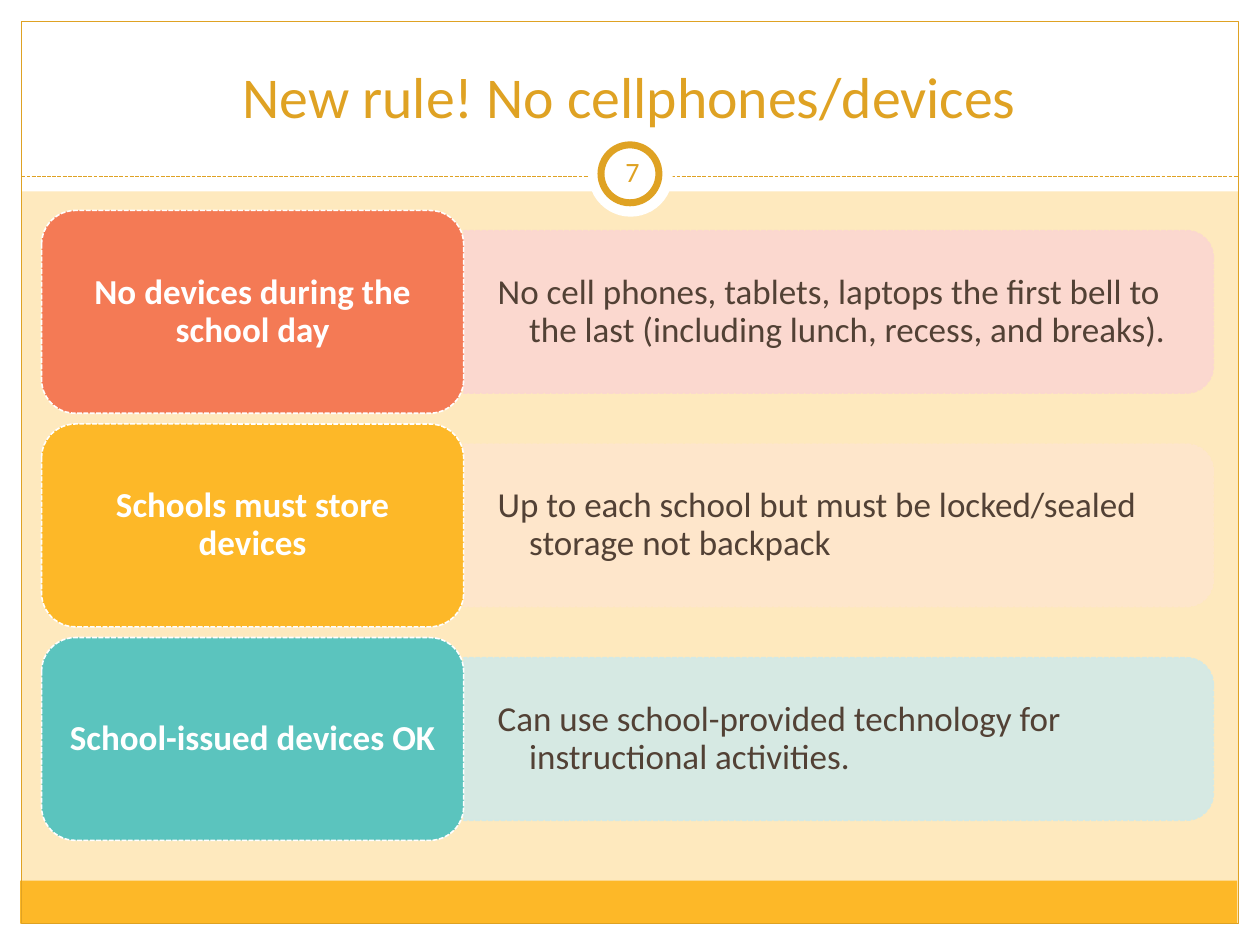
from dataclasses import dataclass

from lxml import etree
from pptx import Presentation
from pptx.dml.color import RGBColor
from pptx.enum.dml import MSO_LINE
from pptx.enum.shapes import MSO_CONNECTOR, MSO_SHAPE
from pptx.enum.text import MSO_ANCHOR, PP_ALIGN
from pptx.oxml.ns import qn
from pptx.util import Inches, Pt

RECT = MSO_SHAPE.RECTANGLE
OVAL = MSO_SHAPE.OVAL
ROUND = MSO_SHAPE.ROUNDED_RECTANGLE
TAB = MSO_SHAPE.ROUND_2_SAME_RECTANGLE
LINE = MSO_CONNECTOR.STRAIGHT
DASH = MSO_LINE.SQUARE_DOT
MID = MSO_ANCHOR.MIDDLE
LOW = MSO_ANCHOR.BOTTOM
LEFT = PP_ALIGN.LEFT
CENTER = PP_ALIGN.CENTER

FONT = "Calibri"
WHITE = "FFFFFF"
GOLD = "DFA223"
AMBER = "FDB828"
CREAM = "FEE9BE"
BROWN = "524135"

TOP, STEP = 1.67, 1.695
CARD_W, CARD_H = 3.35, 1.61
BAR_W, BAR_H = 5.95, 1.29


@dataclass
class Box:
    x: float
    y: float
    w: float
    h: float

    def args(self):
        return [Inches(v) for v in (self.x, self.y, self.w, self.h)]


@dataclass
class Style:
    size: float
    color: str
    bold: bool = False
    align: PP_ALIGN = CENTER
    anchor: MSO_ANCHOR = MID
    pad: tuple = (0.1, 0.05)
    space: float = 1.0
    hang: float = 0


@dataclass
class Rule:
    head: str
    body: str
    fill: str
    tint: str


TITLE = Style(33, GOLD, anchor=LOW)
NUMBER = Style(16, GOLD, pad=(0.05, 0.05))
HEAD = Style(20, WHITE, bold=True, pad=(0.08, 0.04), space=0.9)
BODY = Style(20, BROWN, align=LEFT, pad=(0.27, 0.14), space=0.9, hang=0.25)

RULES = [
    Rule("No devices during the school day",
         "No cell phones, tablets, laptops the first bell to the last "
         "(including lunch, recess, and breaks).",
         "F47A55", "FBD7D1"),
    Rule("Schools must store devices",
         "Up to each school but must be locked/sealed storage not backpack",
         AMBER, "FEE6CD"),
    Rule("School-issued devices OK",
         "Can use school-provided technology for instructional activities.",
         "5BC4BE", "D2EAE8"),
]


def paint(target, color: str) -> None:
    target.solid()
    target.fore_color.rgb = RGBColor.from_string(color)


def stroke(line, color: str, width: float, dash: bool = False) -> None:
    paint(line.fill, color)
    line.width = Pt(width)
    if dash:
        line.dash_style = DASH


def fade(shape, share: int) -> None:
    for color in shape._element.spPr.iter(qn("a:srgbClr")):
        etree.SubElement(color, qn("a:alpha"), val=str(share * 1000))


def draw(slide, kind: MSO_SHAPE, box: Box, fill: str = "", edge: str = "",
         width: float = 0.9, dash: bool = False):
    shape = slide.shapes.add_shape(kind, *box.args())
    shape.shadow.inherit = False
    if fill:
        paint(shape.fill, fill)
    else:
        shape.fill.background()
    if edge:
        stroke(shape.line, edge, width, dash)
    else:
        shape.line.fill.background()
    return shape


def write(slide, box: Box, text: str, style: Style) -> None:
    frame = slide.shapes.add_textbox(*box.args()).text_frame
    frame.word_wrap = True
    frame.vertical_anchor = style.anchor
    side, edge = (Inches(v) for v in style.pad)
    frame.margin_left = frame.margin_right = side
    frame.margin_top = frame.margin_bottom = edge
    para = frame.paragraphs[0]
    para.text = text
    para.alignment = style.align
    para.line_spacing = style.space
    para.font.name = FONT
    para.font.size = Pt(style.size)
    para.font.bold = style.bold
    para.font.color.rgb = RGBColor.from_string(style.color)
    if style.hang:
        props = para._p.get_or_add_pPr()
        props.set("marL", str(Inches(style.hang)))
        props.set("indent", str(-Inches(style.hang)))


def draw_frame(slide) -> None:
    paint(slide.background.fill, CREAM)
    for box in (Box(0, 7.33, 10, 0.17), Box(0, 0, 10, 1.52),
                Box(0, 0, 0.17, 7.5), Box(9.83, 0, 0.17, 7.5)):
        draw(slide, RECT, box, WHITE)
    draw(slide, RECT, Box(0.16, 6.99, 9.66, 0.34), AMBER)
    draw(slide, RECT, Box(0.17, 0.17, 9.66, 7.16), edge=GOLD, width=0.75)
    line = slide.shapes.add_connector(
        LINE, Inches(0.17), Inches(1.4), Inches(9.83), Inches(1.4))
    stroke(line.line, GOLD, 0.75, True)
    etree.SubElement(line._element.spPr, qn("a:effectLst"))
    draw(slide, OVAL, Box(4.67, 1.05, 0.67, 0.67), WHITE)
    draw(slide, OVAL, Box(4.77, 1.15, 0.46, 0.46), WHITE, GOLD, 4)


def draw_rule(slide, rule: Rule, top: float) -> None:
    left = 0.33
    edge = left + CARD_W
    mid = top + CARD_H / 2
    bar = Box(edge + (BAR_W - BAR_H) / 2, mid - BAR_W / 2, BAR_H, BAR_W)
    shape = draw(slide, TAB, bar, rule.tint, rule.tint, dash=True)
    shape.rotation = 90
    fade(shape, 90)
    write(slide, Box(edge, mid - 0.58, 5.89, 1.16), rule.body, BODY)
    card = Box(left, top, CARD_W, CARD_H)
    draw(slide, ROUND, card, rule.fill, WHITE, dash=True)
    inner = Box(left + 0.08, top + 0.08, CARD_W - 0.16, CARD_H - 0.16)
    write(slide, inner, rule.head, HEAD)


def main() -> None:
    deck = Presentation()
    deck.slide_width, deck.slide_height = Inches(10), Inches(7.5)
    slide = deck.slides.add_slide(deck.slide_layouts[6])
    draw_frame(slide)
    write(slide, Box(0.33, 0.25, 9.33, 0.83),
          "New rule! No cellphones/devices", TITLE)
    write(slide, Box(4.77, 1.12, 0.5, 0.48), "7", NUMBER)
    for i, rule in enumerate(RULES):
        draw_rule(slide, rule, TOP + i * STEP)
    deck.save("out.pptx")


if __name__ == "__main__":
    main()
